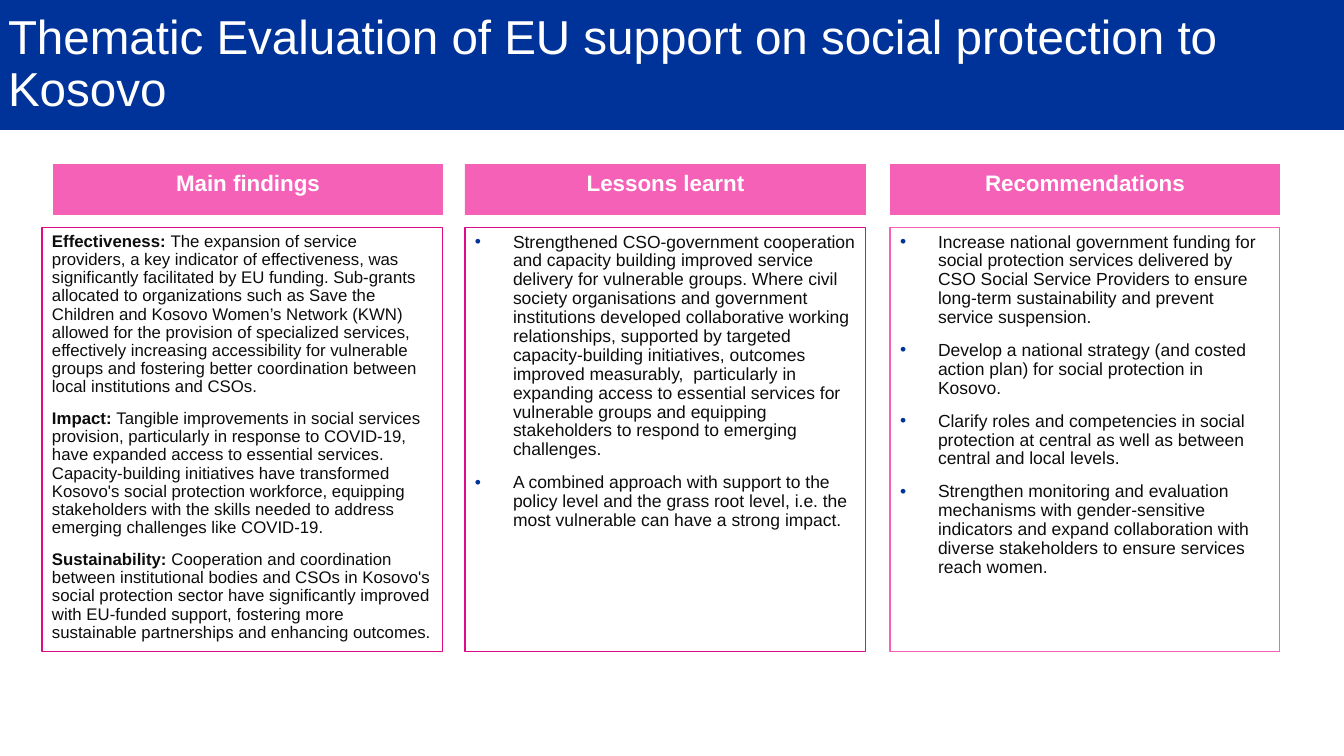
from lxml import etree
from pptx import Presentation
from pptx.dml.color import RGBColor
from pptx.enum.shapes import MSO_SHAPE
from pptx.enum.text import MSO_ANCHOR, PP_ALIGN
from pptx.oxml.ns import qn
from pptx.util import Pt

RECTANGLE = MSO_SHAPE.RECTANGLE
TOP, MIDDLE = MSO_ANCHOR.TOP, MSO_ANCHOR.MIDDLE
LEFT, CENTER = PP_ALIGN.LEFT, PP_ALIGN.CENTER

FONT = "Arial"
COLORS = {
    "blue": "003399",
    "pink": "F661B8",
    "magenta": "DD0C86",
    "white": "FFFFFF",
    "ink": "0D0D0D",
}

TITLE = "Thematic Evaluation of EU support on social protection to Kosovo"

# Each paragraph is a bold lead and its text; a paragraph without a lead gets a bullet.
COLUMNS = [
    {
        "heading": "Main findings", "heading_x": (53, 390), "body_x": (42, 401),
        "border": "magenta", "size": 12,
        "paragraphs": [
            ("Effectiveness: ", "The expansion of service providers, a key indicator of effectiveness, was significantly facilitated by EU funding. Sub-grants allocated to organizations such as Save the Children and Kosovo Women’s Network (KWN) allowed for the provision of specialized services, effectively increasing accessibility for vulnerable groups and fostering better coordination between local institutions and CSOs."),
            ("Impact: ", "Tangible improvements in social services provision, particularly in response to COVID-19, have expanded access to essential services. Capacity-building initiatives have transformed Kosovo's social protection workforce, equipping stakeholders with the skills needed to address emerging challenges like COVID-19."),
            ("Sustainability: ", "Cooperation and coordination between institutional bodies and CSOs in Kosovo's social protection sector have significantly improved with EU-funded support, fostering more sustainable partnerships and enhancing outcomes."),
        ],
    },
    {
        "heading": "Lessons learnt", "heading_x": (465, 401), "body_x": (465, 401),
        "border": "magenta", "size": 12.5,
        "paragraphs": [
            ("", "Strengthened CSO-government cooperation and capacity building improved service delivery for vulnerable groups. Where civil society organisations and government institutions developed collaborative working relationships, supported by targeted capacity-building initiatives, outcomes improved measurably,  particularly in expanding access to essential services for vulnerable groups and equipping stakeholders to respond to emerging challenges."),
            ("", "A combined approach with support to the policy level and the grass root level, i.e. the most vulnerable can have a strong impact."),
        ],
    },
    {
        "heading": "Recommendations", "heading_x": (890, 390), "body_x": (890, 390),
        "border": "pink", "size": 12.5,
        "paragraphs": [
            ("", "Increase national government funding for social protection services delivered by CSO Social Service Providers to ensure long-term sustainability and prevent service suspension."),
            ("", "Develop a national strategy (and costed action plan) for social protection in Kosovo."),
            ("", "Clarify roles and competencies in social protection at central as well as between central and local levels."),
            ("", "Strengthen monitoring and evaluation mechanisms with gender-sensitive indicators and expand collaboration with diverse stakeholders to ensure services reach women."),
        ],
    },
]

SLIDE_W, SLIDE_H = 1344, 756
TITLE_H = 130
HEADING_Y, HEADING_H = 164, 51
BODY_Y, BODY_H = 228, 424
BULLET_INDENT = 38


def px(length):
    return round(length * 914400 / 100.8)


def color(name):
    return RGBColor.from_string(COLORS[name])


def add_panel(slide, box, fill, insets, anchor=TOP):
    panel = slide.shapes.add_shape(RECTANGLE, *map(px, box))
    panel.shadow.inherit = False
    panel.fill.solid()
    panel.fill.fore_color.rgb = color(fill)
    panel.line.fill.background()
    frame = panel.text_frame
    frame.word_wrap = True
    frame.vertical_anchor = anchor
    frame.margin_left = frame.margin_right = px(insets[0])
    frame.margin_top = frame.margin_bottom = px(insets[1])
    return panel


def format_paragraph(paragraph, size, ink, align=LEFT):
    paragraph.alignment = align
    paragraph.line_spacing = 0.9
    for run in paragraph.runs:
        run.font.name = FONT
        run.font.size = Pt(size)
        run.font.color.rgb = color(ink)


def add_banner(slide, box, text, fill, size, align, anchor, bold):
    banner = add_panel(slide, box, fill, (8, 8), anchor)
    banner.text_frame.text = text
    line = banner.text_frame.paragraphs[0]
    format_paragraph(line, size, "white", align)
    line.runs[0].font.bold = bold


def add_bullet(paragraph):
    properties = paragraph._p.get_or_add_pPr()
    properties.set("marL", str(px(BULLET_INDENT)))
    properties.set("indent", str(-px(BULLET_INDENT)))
    tint = etree.SubElement(properties, qn("a:buClr"))
    etree.SubElement(tint, qn("a:srgbClr"), val=COLORS["blue"])
    etree.SubElement(properties, qn("a:buFont"), typeface=FONT)
    etree.SubElement(properties, qn("a:buChar"), char="•")


def add_body(slide, column):
    x, width = column["body_x"]
    body = add_panel(slide, (x, BODY_Y, width, BODY_H), "white", (10, 5))
    fill_color = body._element.spPr.find(qn("a:solidFill"))[0]
    etree.SubElement(fill_color, qn("a:alpha"), val="50000")
    body.line.color.rgb = color(column["border"])
    body.line.width = Pt(0.75)

    frame = body.text_frame
    for index, (lead, text) in enumerate(column["paragraphs"]):
        paragraph = frame.add_paragraph() if index else frame.paragraphs[0]
        paragraph.text = lead or text
        if lead:
            paragraph.runs[0].font.bold = True
            paragraph.add_run().text = text
        else:
            add_bullet(paragraph)
        format_paragraph(paragraph, column["size"], "ink")
        if index:
            paragraph.space_before = Pt(10)


def main():
    deck = Presentation()
    deck.slide_width, deck.slide_height = px(SLIDE_W), px(SLIDE_H)
    slide = deck.slides.add_slide(deck.slide_layouts[6])

    add_banner(slide, (0, 0, SLIDE_W, TITLE_H), TITLE, "blue", 34, LEFT, MIDDLE, False)
    for column in COLUMNS:
        x, width = column["heading_x"]
        add_banner(slide, (x, HEADING_Y, width, HEADING_H), column["heading"],
                   "pink", 16, CENTER, TOP, True)
        add_body(slide, column)

    deck.save("out.pptx")


if __name__ == "__main__":
    main()
